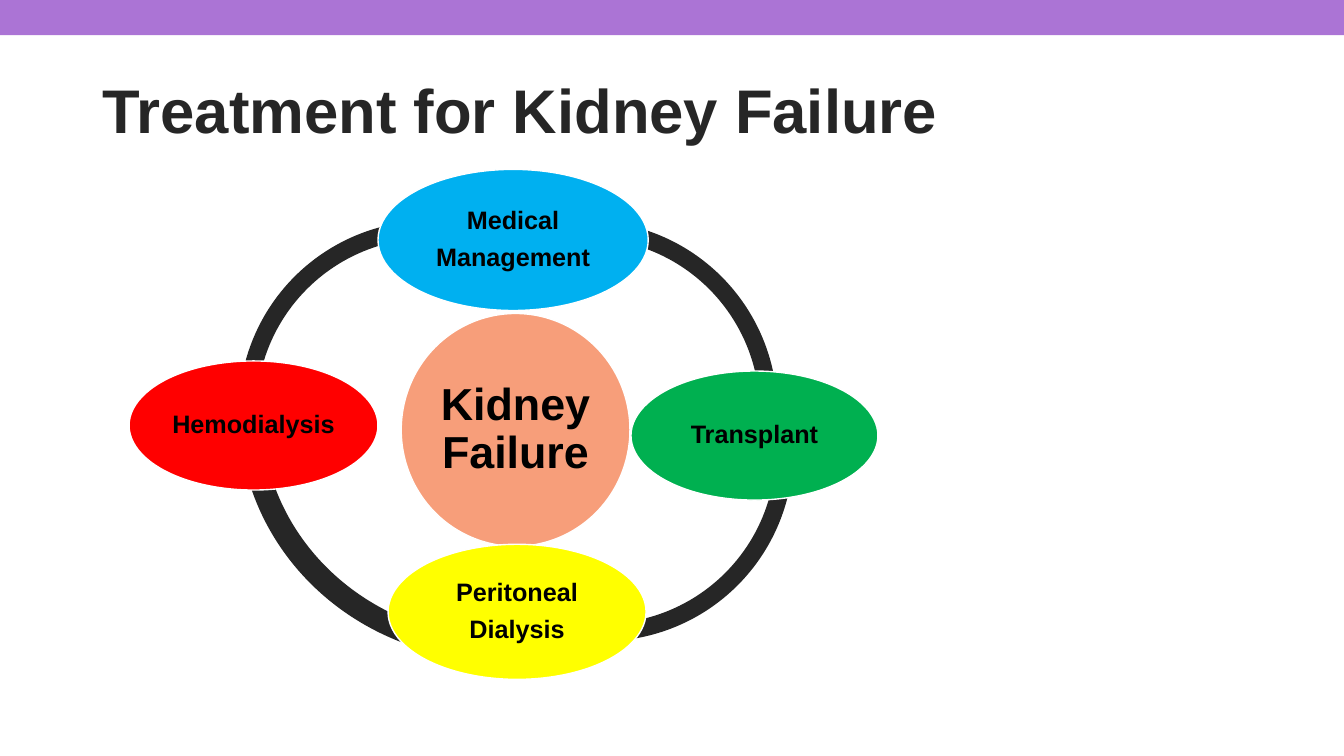
from pptx import Presentation
from pptx.dml.color import RGBColor
from pptx.enum.shapes import MSO_SHAPE
from pptx.enum.text import MSO_ANCHOR, PP_ALIGN
from pptx.util import Pt

WHITE = RGBColor(0xFF, 0xFF, 0xFF)
BLACK = RGBColor(0x00, 0x00, 0x00)
DARK = RGBColor(0x26, 0x26, 0x26)
PURPLE = RGBColor(0xAB, 0x74, 0xD5)
SALMON = RGBColor(0xF7, 0x9E, 0x7A)
BLUE = RGBColor(0x00, 0xB0, 0xF0)
GREEN = RGBColor(0x00, 0xB0, 0x50)
YELLOW = RGBColor(0xFF, 0xFF, 0x00)
RED = RGBColor(0xFF, 0x00, 0x00)

prs = Presentation()
prs.slide_width, prs.slide_height = Pt(960), Pt(540)
slide = prs.slides.add_slide(prs.slide_layouts[5])


def add_filled(kind, box, color):
    sp = slide.shapes.add_shape(kind, *map(Pt, box))
    sp.shadow.inherit = False
    sp.fill.solid()
    sp.fill.fore_color.rgb = color
    sp.line.fill.background()
    return sp


def format_text(p, size, color):
    p.line_spacing = 0.9
    for r in p.runs:
        r.font.name = "Arial"
        r.font.size = Pt(size)
        r.font.bold = True
        r.font.color.rgb = color


add_filled(MSO_SHAPE.RECTANGLE, (0, 0, 960, 25.2), PURPLE)

title = slide.shapes.title
title.left, title.top, title.width, title.height = Pt(66), Pt(28.8), Pt(828), Pt(104.4)
tf = title.text_frame
tf.text = "Treatment for Kidney Failure"
tf.vertical_anchor = MSO_ANCHOR.MIDDLE
tf.paragraphs[0].alignment = PP_ALIGN.LEFT
format_text(tf.paragraphs[0], 44, DARK)

# Ring segments: box, start angle, end angle (degrees, clockwise from the right)
arcs = [
    ((170.6, 157.7, 272.2, 272.2), 175.34, 293.27),
    ((170.6, 118.1, 371.5, 353.5), 65.31, 185.25),
    ((294.5, 185.8, 272.2, 272.2), 0.72, 106.09),
    ((283, 157.7, 272.2, 272.2), 252.31, 5.68),
]
for box, start, end in arcs:
    sp = add_filled(MSO_SHAPE.BLOCK_ARC, box, DARK)
    sp.adjustments[0] = start * 0.6
    sp.adjustments[1] = end * 0.6
    sp.adjustments[2] = 0.046

# Ellipses: text, box, fill, font size, inset, space between paragraphs
ellipses = [
    ("Kidney Failure", (286.6, 223.9, 163.4, 166.3), SALMON, 32, 3, 0),
    ("Medical\nManagement", (270, 121, 193, 100.8), BLUE, 18, 2, 7),
    ("Transplant", (450.7, 265, 176.4, 92.2), GREEN, 18, 2, 7),
    ("Peritoneal\nDialysis", (277.2, 388.8, 184.3, 96.5), YELLOW, 18, 2, 7),
    ("Hemodialysis", (92.2, 257.8, 177.8, 92.2), RED, 18, 2, 7),
]
for text, box, color, size, inset, gap in ellipses:
    sp = add_filled(MSO_SHAPE.OVAL, box, color)
    sp.line.color.rgb = WHITE
    sp.line.width = Pt(1)
    tf = sp.text_frame
    tf.text = text
    tf.word_wrap = True
    tf.vertical_anchor = MSO_ANCHOR.MIDDLE
    tf.margin_left = tf.margin_right = tf.margin_top = tf.margin_bottom = Pt(inset)
    for p in tf.paragraphs:
        p.alignment = PP_ALIGN.CENTER
        p.space_after = Pt(gap)
        format_text(p, size, BLACK)

prs.save("out.pptx")
